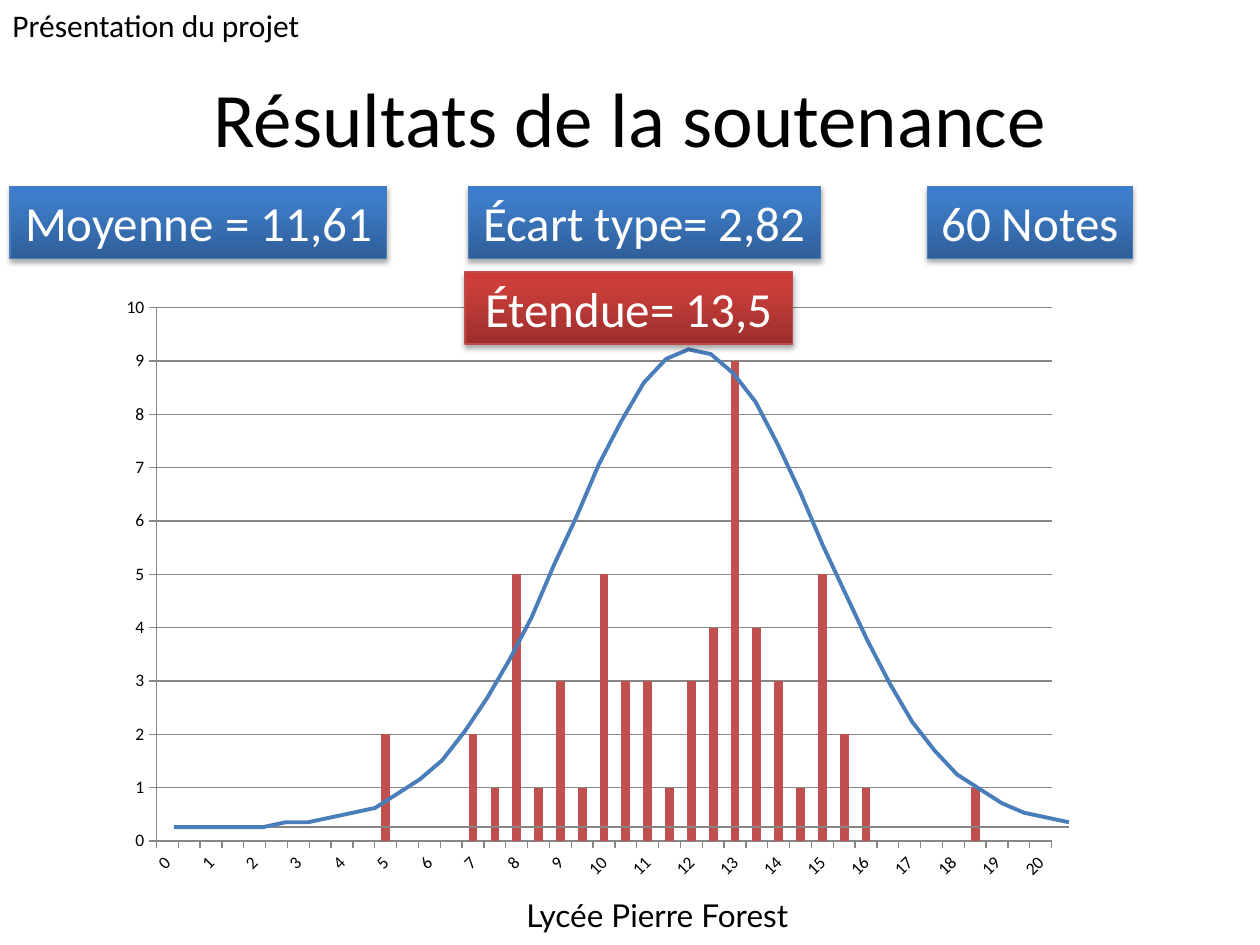
"""Build the slide of defence results: grade counts under a bell curve, with key figures."""
from copy import deepcopy

from lxml.etree import SubElement
from pptx import Presentation
from pptx.chart.data import CategoryChartData, XyChartData
from pptx.dml.color import RGBColor
from pptx.enum.chart import XL_CHART_TYPE, XL_TICK_LABEL_POSITION, XL_TICK_MARK
from pptx.enum.shapes import MSO_SHAPE
from pptx.enum.text import MSO_ANCHOR, MSO_AUTO_SIZE, PP_ALIGN
from pptx.oxml import parse_xml
from pptx.oxml.ns import nsdecls, qn
from pptx.util import Inches, Pt

BLUE = ("2F5F99", "3D7CC7", "3A7CCB"), "4B7EBC"
RED = ("9C2F2D", "CB3E3A", "CE3B37"), "BF4C48"
GRADIENT_POSITIONS = 0, 0.8, 1
GRID_GREY = "868686"

LABELS = [
    ("Lycée Pierre Forest", (4.08, 7.06, 2.36, 0.4), 18, "Lato", PP_ALIGN.LEFT),
    ("Résultats de la soutenance", (0.5, 0.3, 9, 1.25), 44, "Calibri", PP_ALIGN.CENTER),
    ("Présentation du projet", (0, 0, 2.56, 0.4), 18, "Calibri", PP_ALIGN.LEFT),
]
KEY_FIGURES = [
    ("Moyenne = 11,61", (0.08, 1.48, 2.99, 0.57), BLUE),
    ("60 Notes", (7.36, 1.48, 1.63, 0.57), BLUE),
    ("Écart type= 2,82", (3.72, 1.48, 2.79, 0.57), BLUE),
    ("Étendue= 13,5", (3.69, 2.16, 2.6, 0.57), RED),
]
GRADES = [step / 2 for step in range(41)]
COUNTS = {5: 2, 7: 2, 7.5: 1, 8: 5, 8.5: 1, 9: 3, 9.5: 1, 10: 5, 10.5: 3, 11: 3, 11.5: 1,
          12: 3, 12.5: 4, 13: 9, 13.5: 4, 14: 3, 14.5: 1, 15: 5, 15.5: 2, 16: 1, 18.5: 1}
BELL = [0, 0, 0, 0, 0, 1, 1, 2, 3, 4, 7, 10, 14, 20, 27, 35, 44, 55, 65, 76, 85, 93, 98, 100,
        99, 95, 89, 80, 70, 59, 49, 39, 30, 22, 16, 11, 8, 5, 3, 2, 1]


def color(hex_string):
    return RGBColor.from_string(hex_string)


def write(shape, text, size, font_name, hex_string, align, wrap=False):
    frame = shape.text_frame
    frame.word_wrap = wrap
    frame.auto_size = MSO_AUTO_SIZE.NONE if wrap else MSO_AUTO_SIZE.SHAPE_TO_FIT_TEXT
    paragraph = frame.paragraphs[0]
    paragraph.alignment = align
    run = paragraph.add_run()
    run.text = text
    run.font.size = Pt(size)
    run.font.name = font_name
    run.font.color.rgb = color(hex_string)


def add_label(slide, text, box, size, font_name, align):
    label = slide.shapes.add_textbox(*map(Inches, box))
    centred = align == PP_ALIGN.CENTER
    write(label, text, size, font_name, "000000", align, wrap=centred)
    if centred:
        label.text_frame.vertical_anchor = MSO_ANCHOR.MIDDLE


def add_key_figure(slide, text, box, palette):
    stops, outline = palette
    figure = slide.shapes.add_shape(MSO_SHAPE.RECTANGLE, *map(Inches, box))
    figure.fill.gradient()
    figure.fill.gradient_angle = 90
    stop_list = figure._element.spPr.find(".//" + qn("a:gsLst"))
    stop_list.append(deepcopy(stop_list[-1]))
    for stop, position, stop_color in zip(figure.fill.gradient_stops, GRADIENT_POSITIONS, stops):
        stop.position = position
        stop.color.rgb = color(stop_color)
    figure.line.color.rgb = color(outline)
    figure.line.width = Pt(0.75)
    figure.shadow.inherit = False
    effects = figure._element.spPr.find(qn("a:effectLst"))
    shadow = SubElement(effects, qn("a:outerShdw"), blurRad=str(Pt(3.1)), dist=str(Pt(1.8)),
                        dir="5400000", rotWithShape="0")
    tint = SubElement(shadow, qn("a:srgbClr"), val="000000")
    SubElement(tint, qn("a:alpha"), val="35000")
    write(figure, text, 28, "Calibri", "FFFFFF", PP_ALIGN.CENTER)


def add_clear_chart(slide, kind, box, data, plot_area):
    chart = slide.shapes.add_chart(kind, *map(Inches, box), data).chart
    chart.has_legend = False
    chart.has_title = False
    chart.font.size = Pt(10)
    chart.font.name = "Calibri"
    chart.font.color.rgb = color("000000")
    root = chart._chartSpace
    root.find(qn("c:chart")).addnext(parse_xml(
        f'<c:spPr {nsdecls("c", "a")}><a:noFill/><a:ln><a:noFill/></a:ln></c:spPr>'))
    plot = root.find(".//" + qn("c:plotArea"))
    for old in plot.findall(qn("c:layout")):
        plot.remove(old)
    layout = parse_xml(f'<c:layout {nsdecls("c")}><c:manualLayout/></c:layout>')
    settings = [("layoutTarget", "inner"), ("xMode", "edge"), ("yMode", "edge")]
    for tag, value in settings + list(zip("xywh", plot_area)):
        SubElement(layout[0], qn("c:" + tag), val=str(value))
    plot.insert(0, layout)
    chart.plots[0].vary_by_categories = False
    for axis in (chart.category_axis, chart.value_axis):
        axis.has_major_gridlines = False
        axis.format.line.color.rgb = color(GRID_GREY)
    return chart


def add_counts(slide):
    data = CategoryChartData()
    data.categories = [f"{grade:g}" for grade in GRADES]
    data.add_series("Notes", [COUNTS.get(grade, 0) for grade in GRADES])
    chart = add_clear_chart(slide, XL_CHART_TYPE.COLUMN_CLUSTERED, (0.86, 2.25, 7.64, 4.81),
                            data, (0.05, 0.04, 0.93, 0.88))
    chart.plots[0].gap_width = 150
    bars = chart.plots[0].series[0].format.fill
    bars.solid()
    bars.fore_color.rgb = color("C0504D")
    counts = chart.value_axis
    counts.minimum_scale, counts.maximum_scale, counts.major_unit = 0, 10, 1
    counts.has_major_gridlines = True
    counts.major_gridlines.format.line.color.rgb = color(GRID_GREY)
    grades = chart.category_axis
    grades.tick_labels.font.size = Pt(10)
    grades._element.find(qn("c:txPr")).find(qn("a:bodyPr")).set("rot", "-2700000")
    skip = parse_xml(f'<c:tickLblSkip {nsdecls("c")} val="2"/>')
    grades._element.find(qn("c:noMultiLvlLbl")).addprevious(skip)


def add_bell(slide):
    data = XyChartData()
    series = data.add_series("Loi normale")
    for grade, height in zip(GRADES, BELL):
        series.add_data_point(grade, height)
    chart = add_clear_chart(slide, XL_CHART_TYPE.XY_SCATTER_SMOOTH_NO_MARKERS,
                            (0.86, 2.19, 7.64, 5), data, (0.068, 0.018, 0.931, 0.857))
    curve = chart.plots[0].series[0]
    curve.smooth = True
    curve.format.line.color.rgb = color("4A7EBB")
    curve.format.line.width = Pt(2.25)
    for axis, top in ((chart.category_axis, 20), (chart.value_axis, 113)):
        axis.minimum_scale, axis.maximum_scale = 0, top
        axis.major_tick_mark = XL_TICK_MARK.NONE
        axis.tick_label_position = XL_TICK_LABEL_POSITION.NONE
    chart.value_axis.format.line.fill.background()


def main():
    deck = Presentation()
    deck.slide_width, deck.slide_height = Inches(10), Inches(7.5)
    slide = deck.slides.add_slide(deck.slide_layouts[6])
    for label in LABELS:
        add_label(slide, *label)
    add_counts(slide)
    add_bell(slide)
    for figure in KEY_FIGURES:
        add_key_figure(slide, *figure)
    deck.save("out.pptx")


if __name__ == "__main__":
    main()
